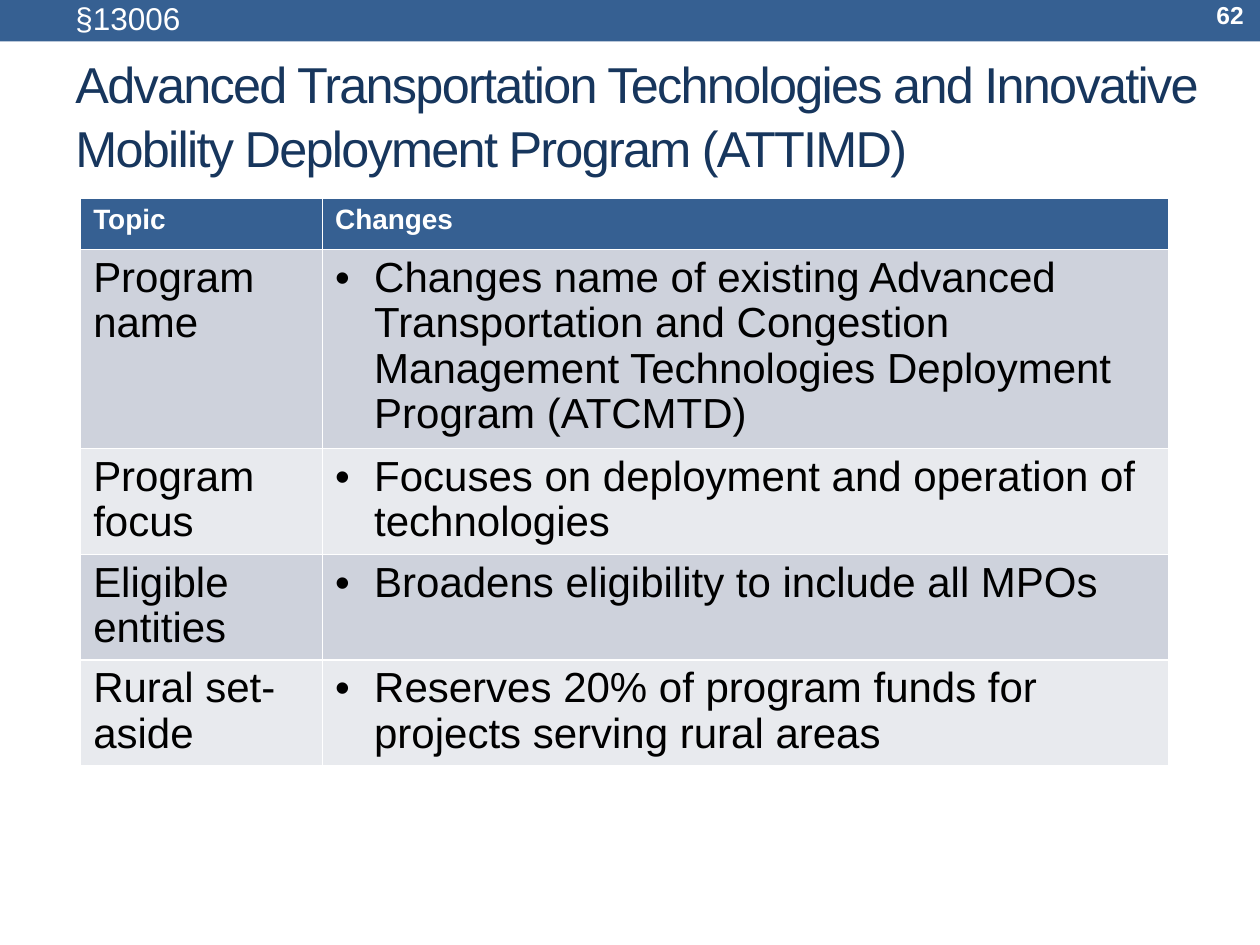
from dataclasses import dataclass

from lxml import etree
from pptx import Presentation
from pptx.dml.color import RGBColor
from pptx.enum import shapes, text
from pptx.oxml import ns
from pptx.util import Inches, Pt

COLORS = {
    "bar": "366092",
    "title": "17365D",
    "white": "FFFFFF",
    "black": "000000",
    "band_dark": "CED2DC",
    "band_light": "E8EAEE",
}
FONT = "Arial"


@dataclass(frozen=True)
class Label:
    wording: str
    left: float
    top: float
    width: float
    height: float
    size: float
    color: str
    bold: bool = False
    alignment: text.PP_ALIGN = text.PP_ALIGN.LEFT
    anchor: text.MSO_ANCHOR = text.MSO_ANCHOR.MIDDLE
    line_spacing: float = 1.0
    right_margin: float = 0.1
    character_spacing: int = 0


@dataclass(frozen=True)
class TopicRow:
    topic: str
    change: str
    height: float


LABELS = [
    Label("Advanced Transportation Technologies and Innovative Mobility Deployment Program (ATTIMD)",
          0.5, 0.42, 9.12, 0.97, 28.8, "title", line_spacing=1.05,
          right_margin=0, character_spacing=-100),
    Label("§13006", 0.5, -0.06, 8.34, 0.4, 18, "white", anchor=text.MSO_ANCHOR.TOP),
    Label("62", 8.8, -0.06, 1.17, 0.36, 14, "white", bold=True,
          alignment=text.PP_ALIGN.RIGHT),
]

HEADER = TopicRow("Topic", "Changes", 0.41)
TOPICS = [
    TopicRow("Program name",
             "Changes name of existing Advanced Transportation and Congestion "
             "Management Technologies Deployment Program (ATCMTD)", 1.58),
    TopicRow("Program focus", "Focuses on deployment and operation of technologies", 0.84),
    TopicRow("Eligible entities", "Broadens eligibility to include all MPOs", 0.84),
    TopicRow("Rural set-aside",
             "Reserves 20% of program funds for projects serving rural areas", 0.84),
]
COLUMN_WIDTHS = [1.92, 6.72]


def rgb(name: str) -> RGBColor:
    return RGBColor.from_string(COLORS[name])


def style_paragraph(paragraph, size: float, color: str, bold: bool) -> None:
    font = paragraph.font
    font.name = FONT
    font.size = Pt(size)
    font.bold = bold
    font.color.rgb = rgb(color)


def add_bar(slide) -> None:
    shape = slide.shapes.add_shape(
        shapes.MSO_SHAPE.RECTANGLE, Inches(0), Inches(-0.07), Inches(10), Inches(0.4))
    shape.shadow.inherit = False
    shape.fill.solid()
    shape.fill.fore_color.rgb = rgb("bar")
    shape.line.fill.background()


def add_label(slide, label: Label) -> None:
    box = slide.shapes.add_textbox(
        Inches(label.left), Inches(label.top), Inches(label.width), Inches(label.height))
    frame = box.text_frame
    frame.word_wrap = True
    frame.vertical_anchor = label.anchor
    frame.margin_right = Inches(label.right_margin)
    paragraph = frame.paragraphs[0]
    run = paragraph.add_run()
    run.text = label.wording
    paragraph.alignment = label.alignment
    paragraph.line_spacing = label.line_spacing
    style_paragraph(paragraph, label.size, label.color, label.bold)
    if label.character_spacing:
        run.font._element.set("spc", str(label.character_spacing))


def add_bullet(paragraph) -> None:
    paragraph.space_after = Pt(3)
    properties = paragraph._p.get_or_add_pPr()
    indent = Inches(0.31)
    properties.set("marL", str(indent))
    properties.set("indent", str(-indent))
    bullet_font = etree.Element(ns.qn("a:buFont"), typeface=FONT)
    bullet = etree.Element(ns.qn("a:buChar"), char="•")
    position = len(properties.findall(ns.qn("a:lnSpc"))) + len(properties.findall(ns.qn("a:spcAft")))
    properties.insert(position, bullet_font)
    properties.insert(position + 1, bullet)


def fill_cell(cell, wording: str, fill: str, size: float, color: str, bold: bool):
    cell.fill.solid()
    cell.fill.fore_color.rgb = rgb(fill)
    cell.text = wording
    paragraph = cell.text_frame.paragraphs[0]
    style_paragraph(paragraph, size, color, bold)
    return paragraph


def add_topic_table(slide) -> None:
    rows = [HEADER, *TOPICS]
    table = slide.shapes.add_table(
        len(rows), len(COLUMN_WIDTHS), Inches(0.64), Inches(1.57),
        Inches(sum(COLUMN_WIDTHS)), Inches(sum(row.height for row in rows))).table
    for column, width in zip(table.columns, COLUMN_WIDTHS):
        column.width = Inches(width)
    for index, row in enumerate(rows):
        table.rows[index].height = Inches(row.height)
        for column_index, wording in enumerate((row.topic, row.change)):
            cell = table.cell(index, column_index)
            if index == 0:
                fill_cell(cell, wording, "bar", 16, "white", True)
                continue
            band = "band_dark" if index % 2 else "band_light"
            paragraph = fill_cell(cell, wording, band, 24, "black", False)
            paragraph.line_spacing = 0.97
            if column_index == 1:
                add_bullet(paragraph)


def main() -> None:
    presentation = Presentation()
    presentation.slide_width = Inches(10)
    presentation.slide_height = Inches(7.5)
    slide = presentation.slides.add_slide(presentation.slide_layouts[6])
    add_bar(slide)
    add_topic_table(slide)
    for label in LABELS:
        add_label(slide, label)
    presentation.save("out.pptx")


if __name__ == "__main__":
    main()
